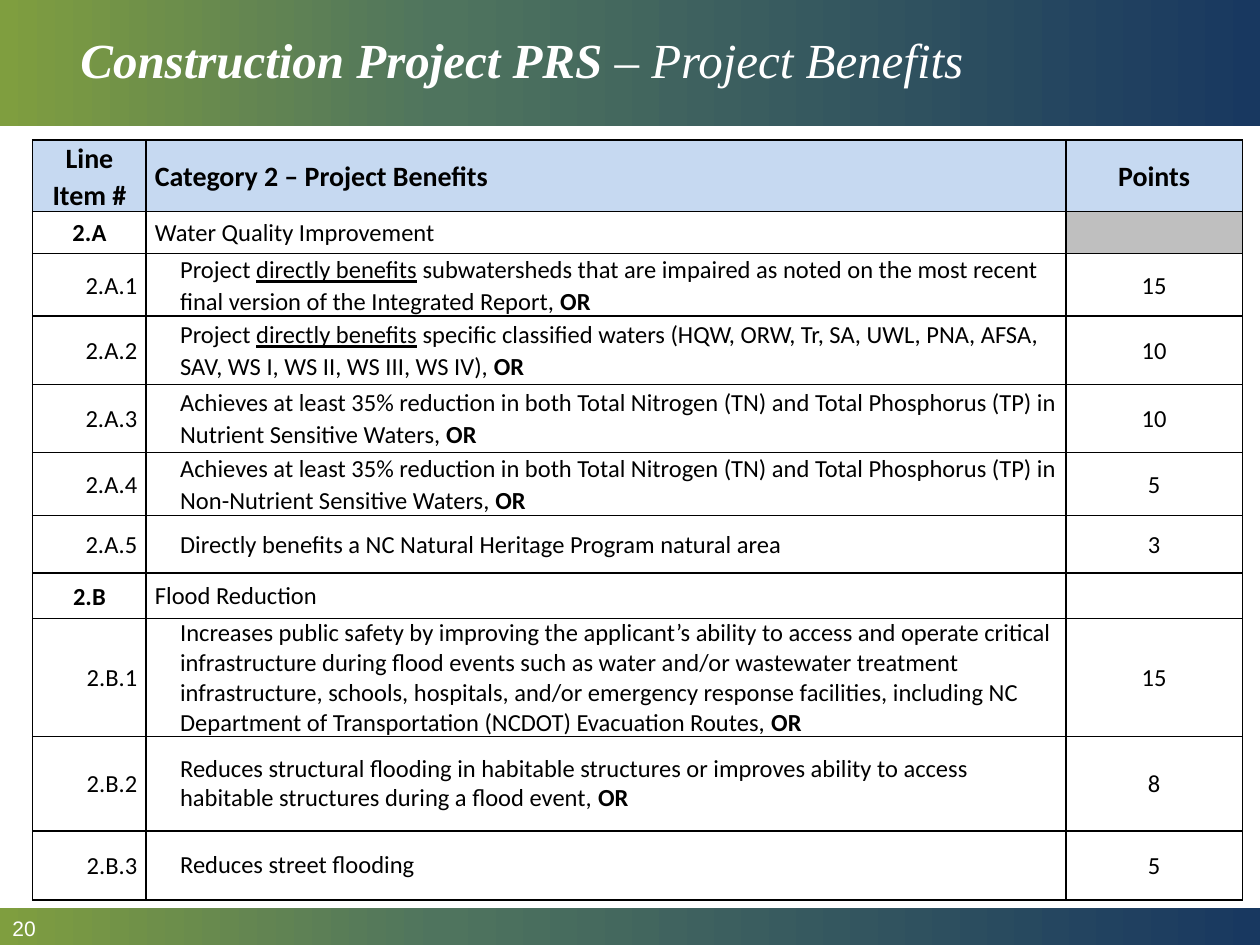
"""Build the Construction Project PRS slide on project benefits."""
from lxml.etree import SubElement
from pptx import Presentation
from pptx.dml.color import RGBColor
from pptx.enum.shapes import MSO_SHAPE
from pptx.enum.text import MSO_ANCHOR, PP_ALIGN
from pptx.oxml import parse_xml
from pptx.oxml.ns import nsdecls, qn
from pptx.util import Inches, Pt

COLORS = {
    "green": "7F9E3F", "teal": "4F745E", "navy": "183860", "white": "FFFFFF",
    "black": "000000", "header": "C6D9F1", "gray": "BFBFBF",
}
LEFT, CENTER, RIGHT = PP_ALIGN.LEFT, PP_ALIGN.CENTER, PP_ALIGN.RIGHT


def write(tf, text, size=14, font="Calibri", color="black", bold=False,
          italic=False, align=LEFT, spacing=1.0, indent=0):
    """Fill a text frame; *stars* mark bold and _underscores_ mark underline."""
    p = tf.paragraphs[0]
    p.alignment = align
    p.line_spacing = spacing
    if indent:
        p._p.get_or_add_pPr().set("marL", str(Inches(indent)))
    for i, chunk in enumerate(text.split("*")):
        for j, piece in enumerate(chunk.split("_")):
            if piece:
                r = p.add_run()
                r.text = piece
                r.font.size = Pt(size)
                r.font.name = font
                r.font.bold = bold or i % 2 == 1
                r.font.italic = italic
                r.font.underline = j % 2 == 1
                r.font.color.rgb = RGBColor.from_string(COLORS[color])


def add_borders(cell):
    """Draw a thin black line on every side of a cell."""
    tcPr = cell._tc.get_or_add_tcPr()
    for side in ("a:lnL", "a:lnR", "a:lnT", "a:lnB"):
        ln = SubElement(tcPr, qn(side), w=str(Pt(1)))
        fill = SubElement(ln, qn("a:solidFill"))
        SubElement(fill, qn("a:srgbClr"), val=COLORS["black"])


prs = Presentation()
prs.slide_width, prs.slide_height = Inches(10), Inches(7.5)
s = prs.slides.add_slide(prs.slide_layouts[6])

stops = "".join(
    f'<a:gs pos="{pos * 1000}"><a:srgbClr val="{COLORS[name]}"/></a:gs>'
    for pos, name in ((0, "green"), (35, "teal"), (100, "navy"))
)
for top, height in ((0, 1), (7.21, 0.3)):
    band = s.shapes.add_shape(MSO_SHAPE.RECTANGLE, 0, Inches(top), Inches(10), Inches(height))
    band.shadow.inherit = False
    band.line.fill.background()
    band.fill.gradient()
    band.fill.gradient_angle = 0
    gradient = band._element.spPr.find(qn("a:gradFill"))
    gradient.replace(gradient.find(qn("a:gsLst")),
                     parse_xml(f'<a:gsLst {nsdecls("a")}>{stops}</a:gsLst>'))

labels = [
    ((0.54, 0, 9.03, 1), "*Construction Project PRS *– Project Benefits",
     dict(size=28, font="Times New Roman", italic=True, spacing=0.9)),
    ((0, 7.22, 1.91, 0.29), "20", dict(size=12, font="Arial")),
]
for box, text, style in labels:
    tf = s.shapes.add_textbox(*map(Inches, box)).text_frame
    tf.word_wrap = True
    tf.vertical_anchor = MSO_ANCHOR.MIDDLE
    write(tf, text, color="white", **style)

rows = [
    (0.55, "Line Item #", "Category 2 – Project Benefits", "Points"),
    (0.33, "2.A", "Water Quality Improvement", ""),
    (0.47, "2.A.1", "Project _directly benefits_ subwatersheds that are impaired as noted "
     "on the most recent final version of the Integrated Report, *OR*", "15"),
    (0.54, "2.A.2", "Project _directly benefits_ specific classified waters (HQW, ORW, Tr, "
     "SA, UWL, PNA, AFSA, SAV, WS I, WS II, WS III, WS IV), *OR*", "10"),
    (0.54, "2.A.3", "Achieves at least 35% reduction in both Total Nitrogen (TN) and Total "
     "Phosphorus (TP) in Nutrient Sensitive Waters, *OR*", "10"),
    (0.5, "2.A.4", "Achieves at least 35% reduction in both Total Nitrogen (TN) and Total "
     "Phosphorus (TP) in Non-Nutrient Sensitive Waters, *OR*", "5"),
    (0.46, "2.A.5", "Directly benefits a NC Natural Heritage Program natural area", "3"),
    (0.36, "2.B", "Flood Reduction", ""),
    (0.9, "2.B.1", "Increases public safety by improving the applicant’s ability to access "
     "and operate critical infrastructure during flood events such as water and/or wastewater "
     "treatment infrastructure, schools, hospitals, and/or emergency response facilities, "
     "including NC Department of Transportation (NCDOT) Evacuation Routes, *OR*", "15"),
    (0.75, "2.B.2", "Reduces structural flooding in habitable structures or improves ability "
     "to access habitable structures during a flood event, *OR*", "8"),
    (0.55, "2.B.3", "Reduces street flooding", "5"),
]
table = s.shapes.add_table(len(rows), 3, Inches(0.26), Inches(1.11),
                           Inches(9.6), Inches(6)).table
table.first_row = table.horz_banding = False
for column, width in zip(table.columns, (0.9, 7.3, 1.4)):
    column.width = Inches(width)

for i, (height, *texts) in enumerate(rows):
    table.rows[i].height = Inches(height)
    header = i == 0
    item = texts[0].count(".") == 2
    for j, text in enumerate(texts):
        cell = table.cell(i, j)
        cell.vertical_anchor = MSO_ANCHOR.MIDDLE
        cell.margin_left = cell.margin_right = Inches(0.07)
        cell.margin_top = cell.margin_bottom = 0
        add_borders(cell)
        fill = "header" if header else "gray" if (i, j) == (1, 2) else None
        if fill:
            cell.fill.solid()
            cell.fill.fore_color.rgb = RGBColor.from_string(COLORS[fill])
        else:
            cell.fill.background()
        write(cell.text_frame, text,
              size=16 if header else 14,
              bold=header or (j == 0 and not item),
              align=(RIGHT if item else CENTER, LEFT, CENTER)[j],
              spacing=1.0 if j == 1 and texts[0].startswith("2.B") else 1.07,
              indent=0.2 if j == 1 and item else 0)

prs.save("out.pptx")
